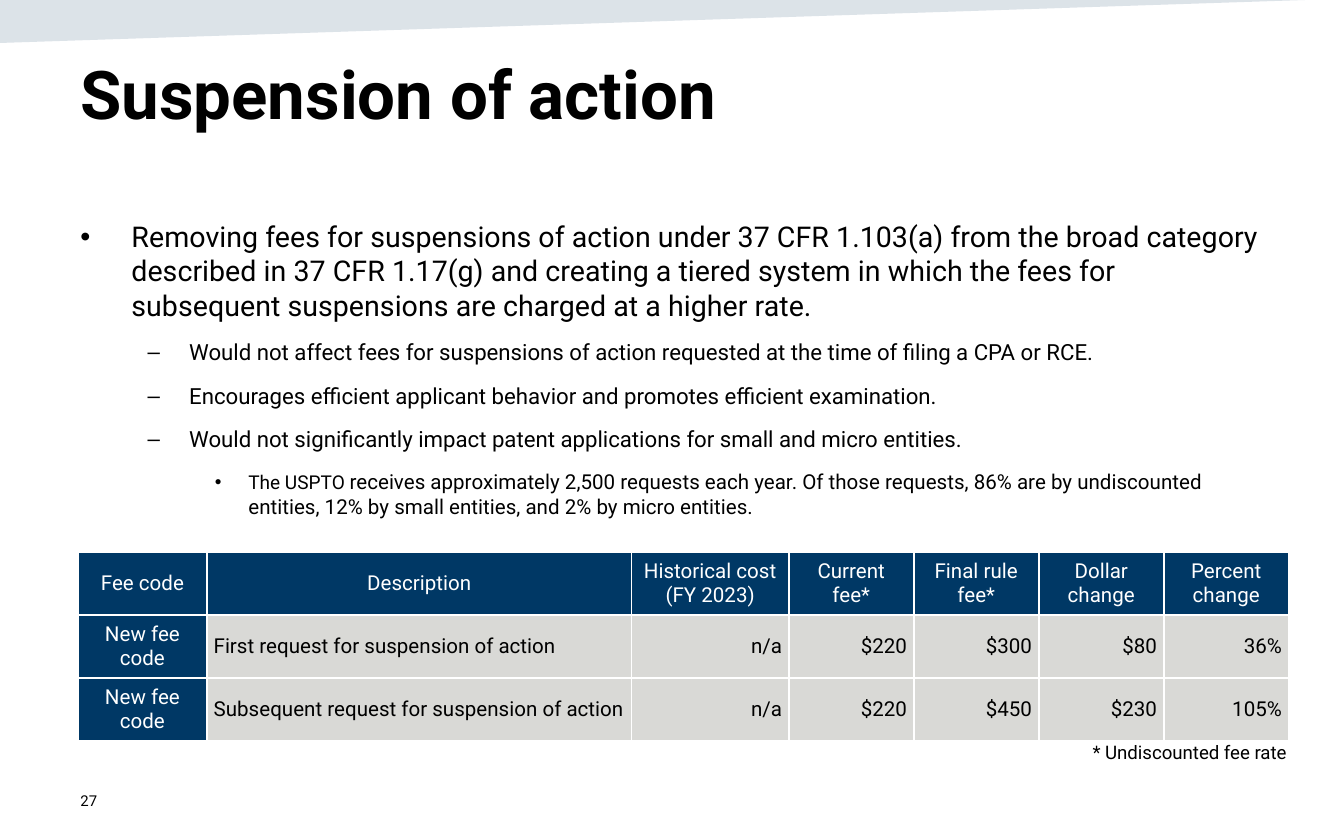
"""Build the slide on fees for suspension of action."""
from lxml import etree
from pptx import Presentation
from pptx.dml.color import RGBColor
from pptx.enum import text as t
from pptx.oxml import ns
from pptx.util import Inches, Pt

HUES = {"ink": "000000", "white": "FFFFFF", "navy": "003865", "gray": "D9D9D6", "band": "164469"}
LEFT, MID, RIGHT = t.PP_ALIGN.LEFT, t.PP_ALIGN.CENTER, t.PP_ALIGN.RIGHT


def add_run(para, words, size, hue="ink", bold=False):
    run = para.add_run()
    run.text = words
    run.font.name = "Roboto"
    run.font.size = Pt(size)
    run.font.bold = bold
    run.font.color.rgb = RGBColor.from_string(HUES[hue])


def add_box(left, top, width, height, anchor=t.MSO_ANCHOR.TOP):
    box = slide.shapes.add_textbox(Inches(left), Inches(top), Inches(width), Inches(height))
    frame = box.text_frame
    frame.word_wrap = True
    frame.vertical_anchor = anchor
    return frame


deck = Presentation()
deck.slide_width, deck.slide_height = Inches(10), Inches(6.25)
slide = deck.slides.add_slide(deck.slide_layouts[6])

form = slide.shapes.build_freeform(0, 0)
form.add_line_segments([(0, Inches(0.32)), (Inches(10.02), Inches(-0.01))], close=True)
band = form.convert_to_shape()
band.shadow.inherit = False
band.line.fill.background()
band.fill.solid()
band.fill.fore_color.rgb = RGBColor.from_string(HUES["band"])
tint = band.element.spPr.find(".//" + ns.qn("a:srgbClr"))
etree.SubElement(tint, ns.qn("a:alpha"), val="15000")

title = add_box(0.5, 0.34, 9, 1.04)
add_run(title.paragraphs[0], "Suspension of action", 36, bold=True)

levels = [("•", 0.38, 0.38), ("–", 0.81, 0.31), ("•", 1.25, 0.25)]
points = [
    (0, [("Removing fees for suspensions of action under 37 CFR 1.103(a) from the broad category "
          "described in 37 CFR 1.17(g) and creating a tiered system in which the fees for "
          "subsequent suspensions are charged at a higher rate.", 15.3)]),
    (1, [("Would not affect fees for suspensions of action requested at the time of filing "
          "a CPA or RCE.", 11.9)]),
    (1, [("Encourages efficient applicant behavior and promotes efficient examination.", 11.9)]),
    (1, [("Would not significantly impact patent applications for small and micro entities.", 11.9)]),
    (2, [("The USPTO ", 10.2),
         ("receives approximately 2,500 requests each year. Of those requests, 86% are by "
          "undiscounted entities, 12% by small entities, and 2% by micro entities.", 11)]),
]
body = add_box(0.5, 1.58, 9, 2.38)
for i, (level, runs) in enumerate(points):
    para = body.add_paragraph() if i else body.paragraphs[0]
    para.level = level
    para.space_before = Pt(9)
    mark, margin, hang = levels[level]
    props = para._p.get_or_add_pPr()
    props.set("marL", str(Inches(margin)))
    props.set("indent", str(-Inches(hang)))
    etree.SubElement(props, ns.qn("a:buFont"), typeface="Arial")
    etree.SubElement(props, ns.qn("a:buChar"), char=mark)
    for words, size in runs:
        add_run(para, words, size)

rows = [
    ["Fee code", "Description", "Historical cost\n(FY 2023)", "Current\nfee*", "Final rule fee*",
     "Dollar change", "Percent change"],
    ["New fee code", "First request for suspension of action", "n/a", "$220", "$300", "$80", "36%"],
    ["New fee code", "Subsequent request for suspension of action", "n/a", "$220", "$450", "$230",
     "105%"],
]
widths = [0.96, 3.16, 1.17] + [0.93] * 4
heights = [0.4, 0.3, 0.3]
grid = slide.shapes.add_table(len(rows), len(widths), Inches(0.58), Inches(4.11),
                              Inches(sum(widths)), Inches(sum(heights))).table
for col, width in zip(grid.columns, widths):
    col.width = Inches(width)
for r, row in enumerate(rows):
    grid.rows[r].height = Inches(heights[r])
    for c, words in enumerate(row):
        cell = grid.cell(r, c)
        head = r == 0 or c == 0
        cell.margin_left = cell.margin_right = cell.margin_top = cell.margin_bottom = Inches(0.05)
        cell.vertical_anchor = t.MSO_ANCHOR.MIDDLE
        cell.fill.solid()
        cell.fill.fore_color.rgb = RGBColor.from_string(HUES["navy" if head else "gray"])
        for i, line in enumerate(words.split("\n")):
            para = cell.text_frame.add_paragraph() if i else cell.text_frame.paragraphs[0]
            para.alignment = MID if head else LEFT if c == 1 else RIGHT
            add_run(para, line, 11, "white" if head else "ink")
        props = cell._tc.get_or_add_tcPr()
        for i, side in enumerate("LRTB"):
            edge = etree.Element(ns.qn("a:ln" + side), w=str(Pt(1)))
            fill = etree.SubElement(edge, ns.qn("a:solidFill"))
            etree.SubElement(fill, ns.qn("a:srgbClr"), val=HUES["white"])
            props.insert(i, edge)

note = add_box(7.49, 5.46, 2.18, 0.27).paragraphs[0]
note.alignment = RIGHT
add_run(note, "* Undiscounted fee rate", 10)

page = add_box(0.5, 5.79, 2.25, 0.33, t.MSO_ANCHOR.MIDDLE)
add_run(page.paragraphs[0], "27", 8)

deck.save("out.pptx")
